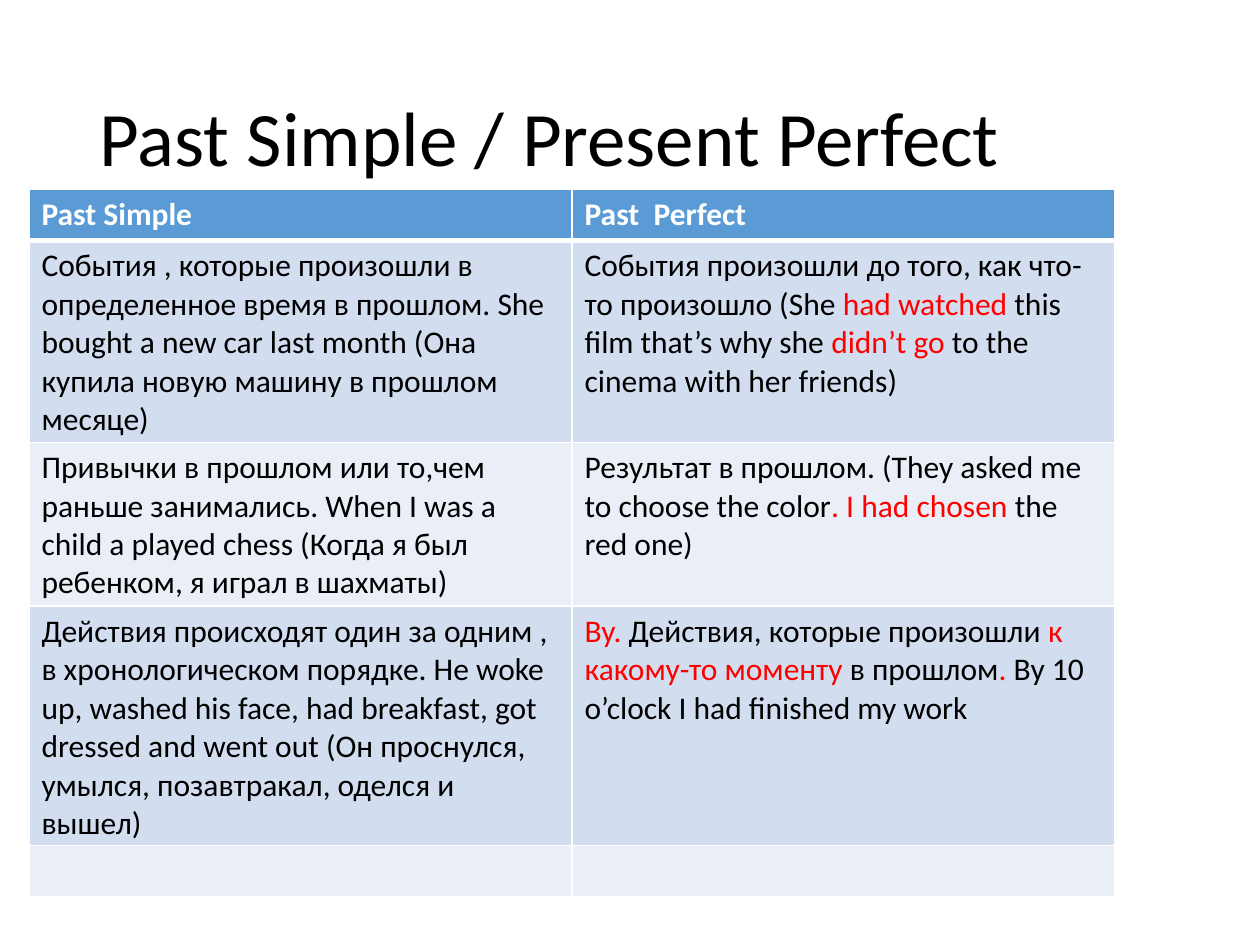
from lxml.etree import SubElement
from pptx import Presentation
from pptx.dml.color import RGBColor
from pptx.enum.text import MSO_ANCHOR
from pptx.oxml.ns import qn
from pptx.util import Inches, Pt

FONT = "Calibri"
BLACK, WHITE, RED = "000000", "FFFFFF", "FF0000"
HEADER_FILL, BAND_FILLS = "5B9BD5", ("D2DEEF", "EAEFF7")
HEADERS = ("Past Simple", "Past  Perfect")
RULES = (
    ("События , которые произошли в определенное время в прошлом. "
     "She bought a new car last month (Она купила новую машину в прошлом месяце)",
     "События произошли до того, как что-то произошло (She *had watched *"
     "this film that’s why she *didn’t go *to the cinema with her friends)"),
    ("Привычки в прошлом или то,чем раньше занимались. "
     "When I was a child a played chess (Когда я был ребенком, я играл в шахматы)",
     "Результат в прошлом. (They asked me to choose the color*. I had chosen *the red one)"),
    ("Действия происходят один за одним , в хронологическом порядке. "
     "He woke up, washed his face, had breakfast, got dressed and went out "
     "(Он проснулся, умылся, позавтракал, оделся и вышел)",
     "*By. *Действия, которые произошли *к какому-то моменту *в прошлом*. *"
     "By 10 o’clock I had finished my work"),
    ("", ""),
)


def rgb(value):
    """Turn a hex string into a colour."""
    return RGBColor.from_string(value)


def add_text(p, text, size=18, color=BLACK, bold=False):
    """Add text to a paragraph, with the parts between asterisks in red."""
    for i, part in enumerate(text.split("*")):
        if part:
            r = p.add_run()
            r.text = part
            r.font.name = FONT
            r.font.size = Pt(size)
            r.font.bold = bold
            r.font.color.rgb = rgb(RED if i % 2 else color)


def add_title(slide, text):
    """Add the slide title."""
    sp = slide.shapes.add_textbox(Inches(0.69), Inches(0.4), Inches(8.62), Inches(1.45))
    tf = sp.text_frame
    tf.word_wrap = True
    tf.vertical_anchor = MSO_ANCHOR.MIDDLE
    p = tf.paragraphs[0]
    p.line_spacing = 0.9
    add_text(p, text, size=44)


def set_borders(cell, color=WHITE, bottom=1):
    """Draw thin cell borders with a chosen bottom width."""
    tcPr = cell._tc.get_or_add_tcPr()
    for i, (side, width) in enumerate((("L", 1), ("R", 1), ("T", 1), ("B", bottom))):
        ln = SubElement(tcPr, qn(f"a:ln{side}"), w=str(Pt(width)))
        fill = SubElement(ln, qn("a:solidFill"))
        SubElement(fill, qn("a:srgbClr"), val=color)
        tcPr.insert(i, ln)


def fill_cell(cell, text, fill, bottom=1, **fmt):
    """Set the fill, borders and text of a cell."""
    cell.fill.solid()
    cell.fill.fore_color.rgb = rgb(fill)
    set_borders(cell, bottom=bottom)
    add_text(cell.text_frame.paragraphs[0], text, **fmt)


def add_tense_table(slide):
    """Add the table that compares the two tenses."""
    count = len(RULES) + 1
    table = slide.shapes.add_table(count, 2, Inches(0.23), Inches(1.5),
                                   Inches(8.62), Inches(0.41 * count)).table
    for col, text in enumerate(HEADERS):
        fill_cell(table.cell(0, col), text, HEADER_FILL, bottom=3, color=WHITE, bold=True)
    for row, texts in enumerate(RULES):
        for col, text in enumerate(texts):
            cell = table.cell(row + 1, col)
            fill_cell(cell, text, BAND_FILLS[row % 2])
            if row == 0:
                cell._tc.tcPr.find(qn("a:lnT")).set("w", str(Pt(3)))


def main():
    """Build and save the slide."""
    prs = Presentation()
    prs.slide_width, prs.slide_height = Inches(10), Inches(7.5)
    slide = prs.slides.add_slide(prs.slide_layouts[6])
    add_title(slide, "Past Simple / Present Perfect")
    add_tense_table(slide)
    prs.save("out.pptx")


if __name__ == "__main__":
    main()
